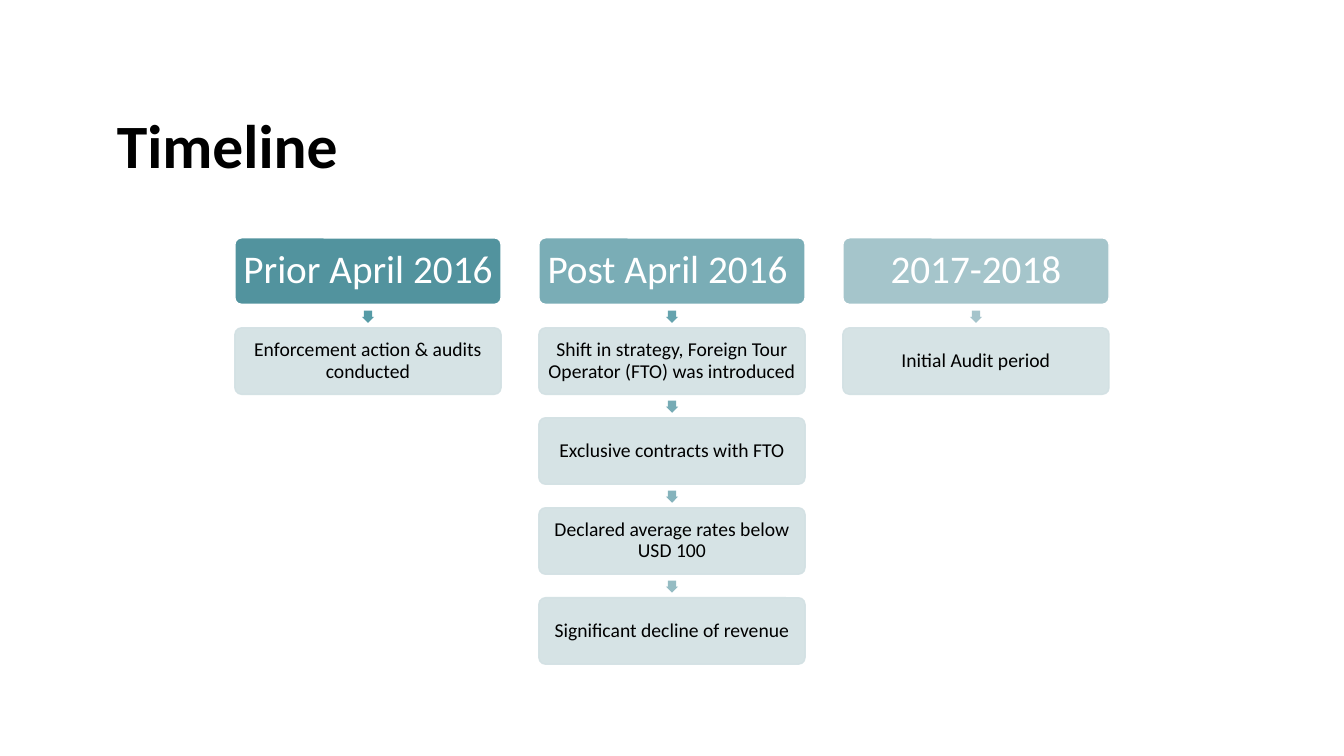
import pptx
import pptx.dml.color
import pptx.enum.shapes
import pptx.enum.text
import pptx.oxml.ns
import pptx.util
import lxml.etree

COLORS = {
    "ink": "000000", "white": "FFFFFF", "step": "D2E0E3",
    "head1": "52939E", "head2": "7AADB6", "head3": "A5C5CB",
    "arrow1": "569BA6", "arrow2": "65A3AE", "arrow3": "76ABB5",
    "arrow4": "85B3BC", "arrow5": "95BCC3", "arrow6": "A5C4CB",
}
HEAD = {"size": 28, "color": "white", "bold": False, "inset": 0.04}
STEP = {"size": 14, "color": "ink", "bold": False, "inset": 0.02}
TITLE = {"size": 44, "color": "ink", "bold": True, "inset": 0.1}

TITLE_BOX = (0.92, 0.4, 11.5, 1.45)
CHART_BOX = (2.33, 2.36, 8.67, 4.23)
ROWS = 5
CARD_W, CARD_H = 2.64, 0.66
ARROW, ARROW_GAP = 0.12, 0.06
RIM = 0.02

COLUMNS = [
    ("Prior April 2016 ", "head1", [("Enforcement action & audits conducted", "arrow1")]),
    ("Post April 2016 ", "head2", [
        ("Shift in strategy, Foreign Tour Operator (FTO) was introduced", "arrow2"),
        ("Exclusive contracts with FTO", "arrow3"),
        ("Declared average rates below USD 100", "arrow4"),
        ("Significant decline of revenue", "arrow5"),
    ]),
    ("2017-2018", "head3", [("Initial Audit period", "arrow6")]),
]


def rgb(name):
    """Return the named colour."""
    return pptx.dml.color.RGBColor.from_string(COLORS[name])


def set_text(sp, text, style, align, anchor):
    """Write one formatted paragraph into a shape."""
    tf = sp.text_frame
    tf.text = text
    margin = pptx.util.Inches(style["inset"])
    frame = {"word_wrap": True, "vertical_anchor": anchor,
             "auto_size": pptx.enum.text.MSO_AUTO_SIZE.NONE}
    if style is not TITLE:
        sides = ("left", "right", "top", "bottom")
        frame.update({f"margin_{side}": margin for side in sides})
    for key, value in frame.items():
        setattr(tf, key, value)
    p = tf.paragraphs[0]
    p.alignment, p.line_spacing = align, 0.9
    font = p.runs[0].font
    values = {"name": "Calibri", "size": pptx.util.Pt(style["size"]), "bold": style["bold"]}
    for key, value in values.items():
        setattr(font, key, value)
    font.color.rgb = rgb(style["color"])


def add_shape(slide, kind, box, fill, adjustments):
    """Add a filled preset shape without a shadow."""
    sp = slide.shapes.add_shape(kind, *map(pptx.util.Inches, box))
    sp.shadow.inherit = False
    sp.fill.solid()
    sp.fill.fore_color.rgb = rgb(fill)
    for i, value in enumerate(adjustments):
        sp.adjustments[i] = value
    return sp


def add_card(slide, x, y, text, fill, line, style):
    """Add a rounded card with its centred text."""
    kind = pptx.enum.shapes.MSO_SHAPE.ROUNDED_RECTANGLE
    sp = add_shape(slide, kind, (x, y, CARD_W, CARD_H), fill, [0.1])
    sp.line.color.rgb = rgb(line)
    sp.line.width = pptx.util.Pt(1)
    set_text(sp, text, style, pptx.enum.text.PP_ALIGN.CENTER,
             pptx.enum.text.MSO_ANCHOR.MIDDLE)
    return sp


def add_step(slide, x, y, text, arrow):
    """Add a translucent step card and the arrow that leads down to it."""
    kind = pptx.enum.shapes.MSO_SHAPE.RIGHT_ARROW
    box = (x + (CARD_W - ARROW) / 2, y - ARROW_GAP - ARROW + RIM / 2, ARROW, ARROW)
    sp = add_shape(slide, kind, box, arrow, [0.667, 0.5])
    sp.rotation = 90
    sp.line.fill.background()
    card = add_card(slide, x, y, text, "step", "step", STEP)
    for clr in card._element.spPr.iter(pptx.oxml.ns.qn("a:srgbClr")):
        lxml.etree.SubElement(clr, pptx.oxml.ns.qn("a:alpha"), val="90000")


def add_title(slide, box, text):
    """Place the title placeholder in the box."""
    sp = slide.shapes.title
    sp.left, sp.top, sp.width, sp.height = map(pptx.util.Inches, box)
    set_text(sp, text, TITLE, pptx.enum.text.PP_ALIGN.LEFT,
             pptx.enum.text.MSO_ANCHOR.BOTTOM)


def add_timeline(slide, box, columns):
    """Lay out the headed columns of steps on an even grid in the box."""
    left, top, width, height = box
    dx = (width - CARD_W) / (len(columns) - 1)
    dy = (height - CARD_H) / (ROWS - 1)
    for col, (head, fill, steps) in enumerate(columns):
        x = left + col * dx
        add_card(slide, x, top, head, fill, "white", HEAD)
        for row, (text, arrow) in enumerate(steps, 1):
            add_step(slide, x, top + row * dy, text, arrow)


def main():
    """Build and save the slide."""
    prs = pptx.Presentation()
    prs.slide_width, prs.slide_height = map(pptx.util.Inches, (13.33, 7.5))
    slide = prs.slides.add_slide(prs.slide_layouts[5])
    add_title(slide, TITLE_BOX, " Timeline")
    add_timeline(slide, CHART_BOX, COLUMNS)
    prs.save("out.pptx")


if __name__ == "__main__":
    main()
